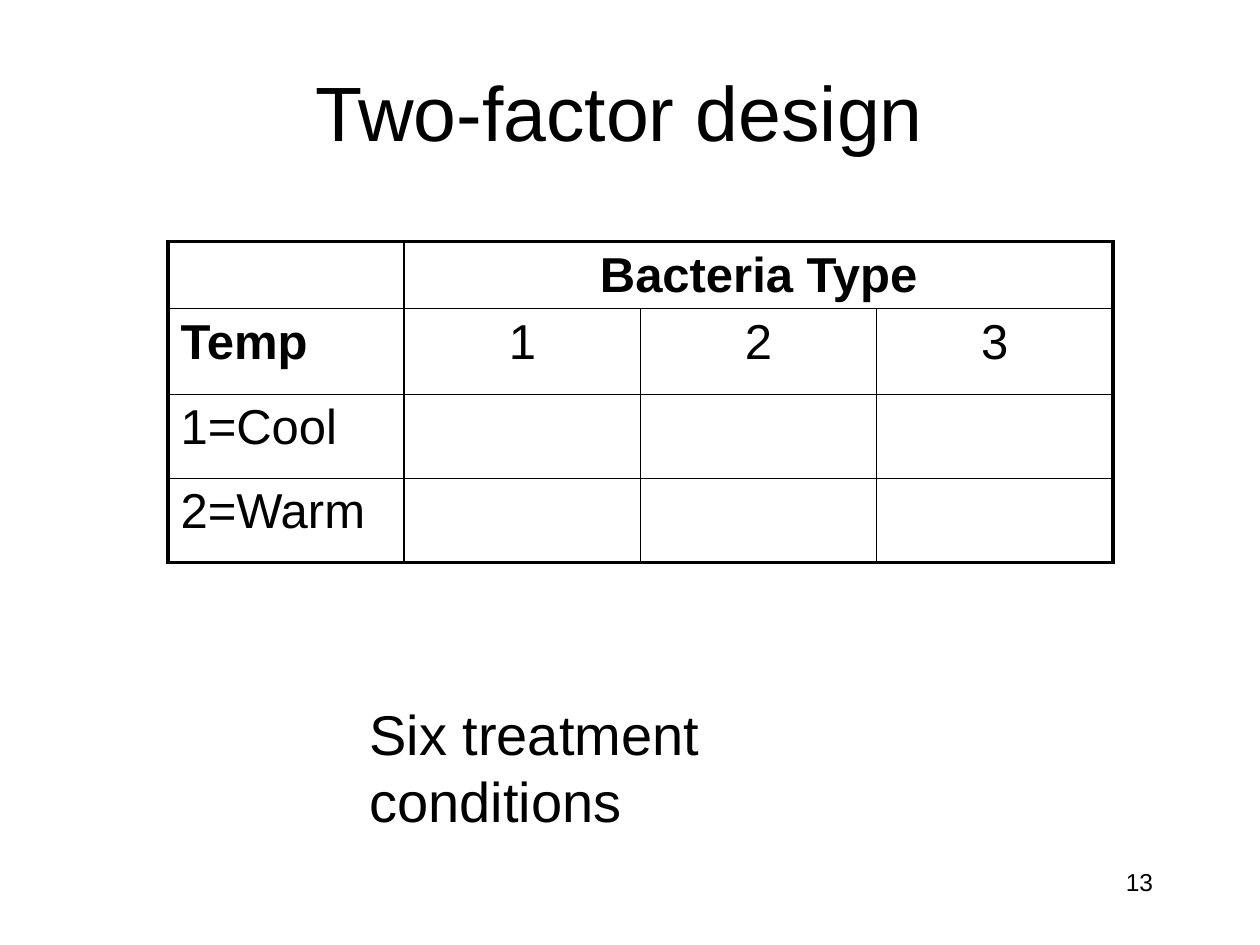
from dataclasses import dataclass

from lxml.etree import SubElement
from pptx import Presentation
from pptx.dml.color import RGBColor
from pptx.enum.text import MSO_ANCHOR, PP_ALIGN
from pptx.oxml.ns import qn
from pptx.util import Pt

COLORS = {"ink": "000000", "background": "FFFFFF"}
FONT = "Arial"
THIN, THICK = 1, 2.25


@dataclass
class Label:
    text: str
    left: float
    top: float
    width: float
    height: float
    size: float
    align: PP_ALIGN = PP_ALIGN.LEFT
    anchor: MSO_ANCHOR = MSO_ANCHOR.TOP
    right_margin: float = 7.2


@dataclass
class Entry:
    text: str
    row: int
    column: int
    bold: bool = False


LABELS = [
    Label("Two-factor design", 48, 18, 612, 90, 44, PP_ALIGN.CENTER, MSO_ANCHOR.MIDDLE),
    Label("Six treatment conditions", 204, 396, 356, 45, 32, right_margin=20),
    Label("13", 516, 492, 150, 36, 14, PP_ALIGN.RIGHT),
]
ENTRIES = [
    Entry("Bacteria Type", 0, 1, True),
    Entry("Temp", 1, 0, True),
    *(Entry(str(kind), 1, kind) for kind in (1, 2, 3)),
    Entry("1=Cool", 2, 0),
    Entry("2=Warm", 3, 0),
]
ROW_HEIGHTS = [38.4, 49, 48, 48]
COLUMN_COUNT, COLUMN_WIDTH = 4, 135


def apply_format(target, values: dict) -> None:
    for name, value in values.items():
        setattr(target, name, value)


def write_text(frame, text: str, size: float, align: PP_ALIGN, bold: bool = False) -> None:
    para = frame.paragraphs[0]
    para.alignment = align
    span = para.add_run()
    span.text = text
    apply_format(span.font, {"name": FONT, "size": Pt(size), "bold": bold})
    span.font.color.rgb = RGBColor.from_string(COLORS["ink"])


def add_label(page, label: Label) -> None:
    box = page.shapes.add_textbox(
        Pt(label.left), Pt(label.top), Pt(label.width), Pt(label.height)
    )
    apply_format(box.text_frame, {
        "word_wrap": True,
        "vertical_anchor": label.anchor,
        "margin_right": Pt(label.right_margin),
    })
    write_text(box.text_frame, label.text, label.size, label.align)


def set_borders(cell, widths: dict[str, float]) -> None:
    properties = cell._tc.get_or_add_tcPr()
    for side, width in widths.items():
        line = SubElement(properties, qn(f"a:{side}"), w=str(Pt(width)))
        fill = SubElement(line, qn("a:solidFill"))
        SubElement(fill, qn("a:srgbClr"), val=COLORS["ink"])


def add_design_table(page) -> None:
    last_row, last_column = len(ROW_HEIGHTS) - 1, COLUMN_COUNT - 1
    table = page.shapes.add_table(
        len(ROW_HEIGHTS), COLUMN_COUNT, Pt(96), Pt(138),
        Pt(COLUMN_COUNT * COLUMN_WIDTH), Pt(sum(ROW_HEIGHTS)),
    ).table
    apply_format(table, {"first_row": False, "horz_banding": False})
    for row, height in zip(table.rows, ROW_HEIGHTS):
        row.height = Pt(height)
    for column in table.columns:
        column.width = Pt(COLUMN_WIDTH)
    for row in range(last_row + 1):
        for column in range(last_column + 1):
            cell = table.cell(row, column)
            apply_format(cell, {"margin_top": Pt(3.6), "margin_bottom": Pt(2)})
            set_borders(cell, {
                "lnL": THICK if column == 0 else THIN,
                "lnR": THICK if column == last_column or (row == 0 and column) else THIN,
                "lnT": THICK if row == 0 else THIN,
                "lnB": THICK if row == last_row else THIN,
            })
            cell.fill.background()
    table.cell(0, 1).merge(table.cell(0, last_column))
    for entry in ENTRIES:
        align = PP_ALIGN.CENTER if entry.column else PP_ALIGN.LEFT
        frame = table.cell(entry.row, entry.column).text_frame
        write_text(frame, entry.text, 28, align, entry.bold)


def main() -> None:
    deck = Presentation()
    apply_format(deck, {"slide_width": Pt(720), "slide_height": Pt(540)})
    page = deck.slides.add_slide(deck.slide_layouts[6])
    page.background.fill.solid()
    page.background.fill.fore_color.rgb = RGBColor.from_string(COLORS["background"])
    add_design_table(page)
    for label in LABELS:
        add_label(page, label)
    deck.save("out.pptx")


if __name__ == "__main__":
    main()
